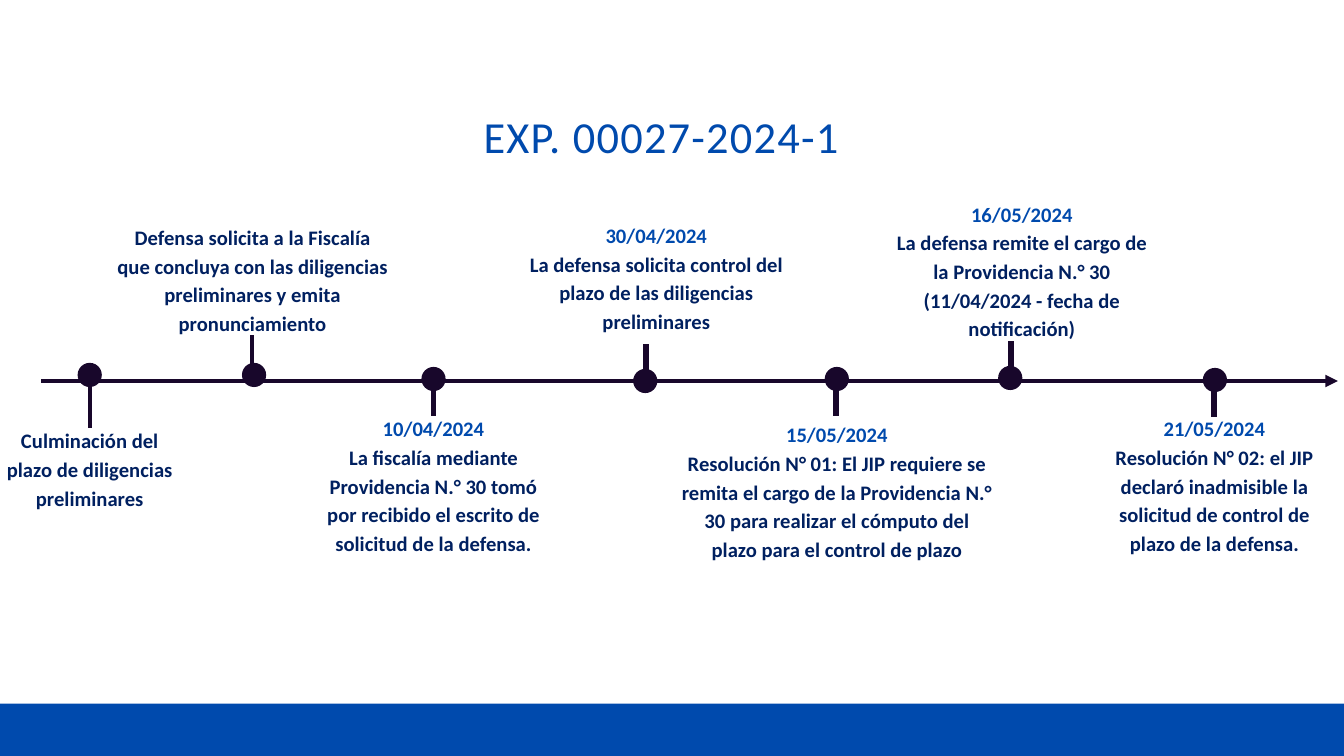
"""Build the timeline slide of case file 00027-2024-1."""
from lxml import etree
from pptx import Presentation
from pptx.dml.color import RGBColor
from pptx.enum.shapes import MSO_CONNECTOR, MSO_SHAPE
from pptx.enum.text import PP_ALIGN
from pptx.oxml.ns import qn
from pptx.util import Inches, Pt

STRAIGHT = MSO_CONNECTOR.STRAIGHT
OVAL, RECTANGLE = MSO_SHAPE.OVAL, MSO_SHAPE.RECTANGLE
CENTER = PP_ALIGN.CENTER
INK, BLUE, NAVY = "18072B", "004AAD", "002060"
DOT = 0.24

prs = Presentation()
prs.slide_width, prs.slide_height = Inches(13.33), Inches(7.5)
slide = prs.slides.add_slide(prs.slide_layouts[6])


def rgb(value):
    return RGBColor.from_string(value)


def add_text(box, lines, size, leading, bold):
    frame = slide.shapes.add_textbox(*map(Inches, box)).text_frame
    frame.word_wrap = True
    frame.margin_left = frame.margin_right = frame.margin_top = frame.margin_bottom = 0
    for i, (text, color) in enumerate(lines):
        paragraph = frame.paragraphs[0] if i == 0 else frame.add_paragraph()
        paragraph.text = text
        paragraph.alignment = CENTER
        paragraph.line_spacing = Pt(leading)
        paragraph.font.name = "Calibri"
        paragraph.font.size = Pt(size)
        paragraph.font.bold = bold
        paragraph.font.color.rgb = rgb(color)
    return frame


title = add_text((1.81, 1.08, 9.61, 0.53), [("EXP. 00027-2024-1 ", BLUE)], 31.7, 38, False)
title.paragraphs[0].runs[0]._r.get_or_add_rPr().set("spc", "90")

# (dot centre), (stem x, start, end, width), (text box), date, event
milestones = [
    ((0.89, 3.72), (0.89, 3.84, 4.25, 3), (0, 4.21, 1.78, 0.86), "",
     "Culminación del plazo de diligencias preliminares"),
    ((2.52, 3.72), (2.5, 3.65, 3.32, 3), (1.16, 2.19, 2.69, 1.15), "",
     "Defensa solicita a la Fiscalía que concluya con las diligencias preliminares y emita pronunciamiento"),
    ((4.3, 3.76), (4.3, 3.87, 4.13, 3), (3.17, 4.09, 2.26, 1.74), "10/04/2024",
     "La fiscalía mediante Providencia N.° 30 tomó por recibido el escrito de solicitud de la defensa."),
    ((6.4, 3.78), (6.41, 3.77, 3.41, 4), (5.18, 2.17, 2.66, 1.15), "30/04/2024",
     "La defensa solicita control del plazo de las diligencias preliminares"),
    ((8.3, 3.76), (8.29, 3.78, 4.13, 4), (6.74, 4.15, 3.12, 1.45), "15/05/2024",
     "Resolución N° 01: El JIP requiere se remita el cargo de la Providencia N.° 30 "
     "para realizar el cómputo del plazo para el control de plazo"),
    ((10.02, 3.75), (10.03, 3.74, 3.38, 4), (8.81, 1.96, 2.65, 1.45), "16/05/2024",
     "La defensa remite el cargo de la Providencia N.° 30 (11/04/2024 - fecha de notificación)"),
    ((12.05, 3.77), (12.04, 3.79, 4.14, 4), (10.92, 4.09, 2.25, 1.45), "21/05/2024",
     "Resolución N° 02: el JIP declaró inadmisible la solicitud de control de plazo de la defensa."),
]

lines = [(0.41, 3.78, 13.27, 3.78, 3)]
marks = [(RECTANGLE, (0, 6.98, 13.33, 0.52), BLUE)]
for (dot_x, dot_y), (stem_x, start, end, width), box, date, event in milestones:
    lines.append((stem_x, start, stem_x, end, width))
    marks.append((OVAL, (dot_x - DOT / 2, dot_y - DOT / 2, DOT, DOT), INK))
    dated = [(date, BLUE)] if date else []
    add_text(box, dated + [(event, NAVY)], 14.7, 20.5, True)

connectors = []
for x1, y1, x2, y2, width in lines:
    connector = slide.shapes.add_connector(STRAIGHT, *map(Inches, (x1, y1, x2, y2)))
    connector.line.color.rgb = rgb(INK)
    connector.line.width = Pt(width)
    etree.SubElement(connector._element.spPr, qn("a:effectLst"))
    connectors.append(connector)
axis = connectors[0]
etree.SubElement(axis.line._get_or_add_ln(), qn("a:tailEnd"), type="triangle")

for kind, box, color in marks:
    mark = slide.shapes.add_shape(kind, *map(Inches, box))
    mark.shadow.inherit = False
    mark.fill.solid()
    mark.fill.fore_color.rgb = rgb(color)
    mark.line.fill.background()

prs.save("out.pptx")
